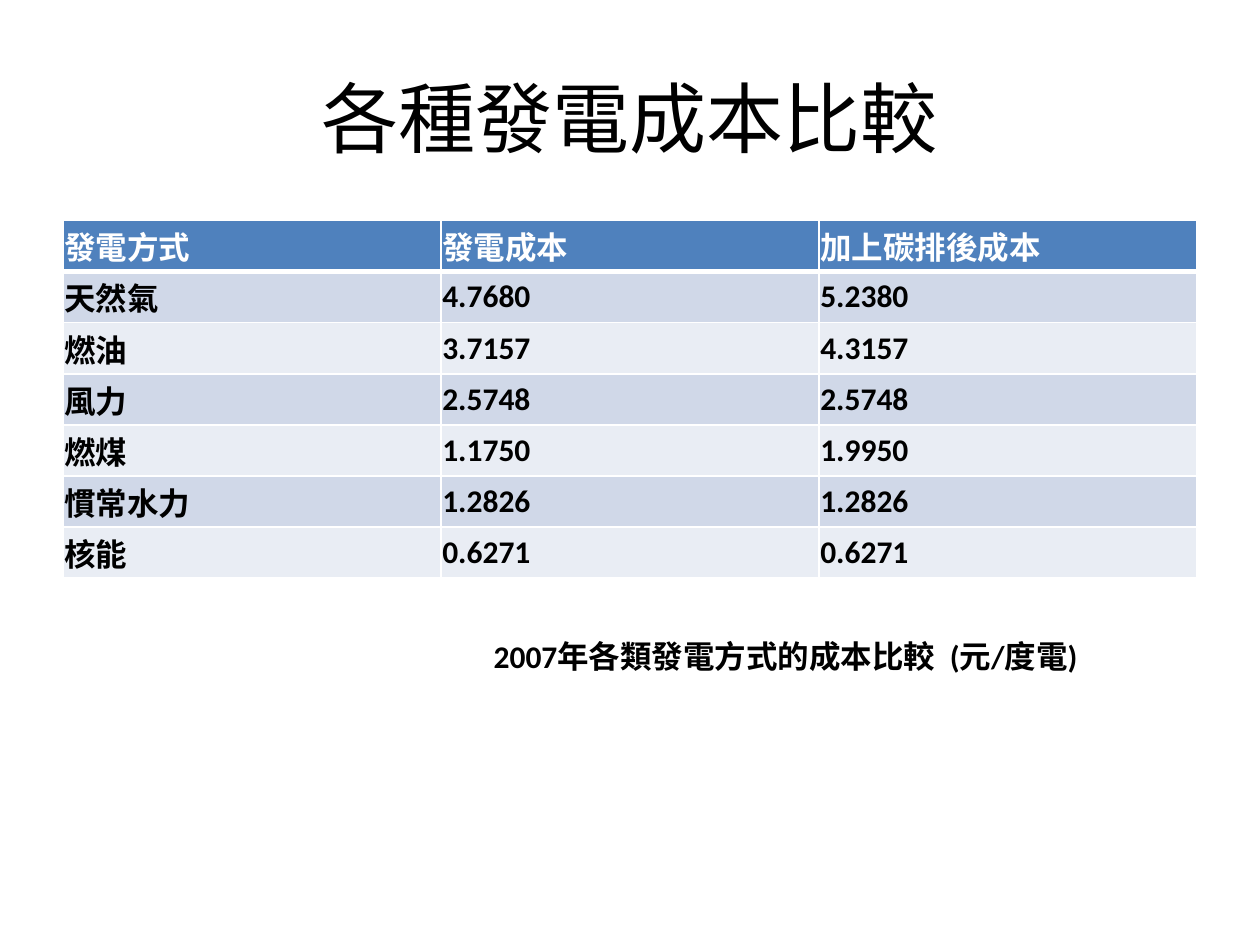
from lxml import etree
from pptx import Presentation
from pptx.dml.color import RGBColor
from pptx.enum.text import MSO_ANCHOR, PP_ALIGN
from pptx.oxml.ns import qn
from pptx.util import Pt

MIDDLE, TOP = MSO_ANCHOR.MIDDLE, MSO_ANCHOR.TOP
LEFT, CENTER = PP_ALIGN.LEFT, PP_ALIGN.CENTER

FONT = "Calibri"
COLORS = {
    "black": "000000",
    "white": "FFFFFF",
    "head": "4F81BD",
    "odd": "D0D8E8",
    "even": "E9EDF4",
}
COSTS = [
    ("發電方式", "發電成本", "加上碳排後成本"),
    ("天然氣", "4.7680", "5.2380"),
    ("燃油", "3.7157", "4.3157"),
    ("風力", "2.5748", "2.5748"),
    ("燃煤", "1.1750", "1.9950"),
    ("慣常水力", "1.2826", "1.2826"),
    ("核能", "0.6271", "0.6271"),
]


def rgb(name):
    return RGBColor.from_string(COLORS[name])


def put_text(frame, text, size=18, bold=True, color="black", align=LEFT):
    para = frame.paragraphs[0]
    para.alignment = align
    run = para.add_run()
    run.text = text
    font = run.font
    font.name, font.size, font.bold = FONT, Pt(size), bold
    font.color.rgb = rgb(color)


def add_label(slide, text, box, anchor=TOP, **style):
    frame = slide.shapes.add_textbox(*map(Pt, box)).text_frame
    frame.word_wrap = True
    frame.vertical_anchor = anchor
    put_text(frame, text, **style)


def add_edge(cell, side, width):
    props = cell._tc.get_or_add_tcPr()
    line = etree.SubElement(props, qn(f"a:ln{side}"), w=str(Pt(width)))
    fill = etree.SubElement(line, qn("a:solidFill"))
    etree.SubElement(fill, qn("a:srgbClr"), val=COLORS["white"])


def style_cell(cell, text, row):
    cell.vertical_anchor = MIDDLE
    cell.margin_left = cell.margin_right = Pt(0.75)
    cell.margin_top = cell.margin_bottom = Pt(0.75)
    put_text(cell.text_frame, text, color="black" if row else "white")
    widths = {"L": 1, "R": 1, "T": 3 if row == 1 else 1, "B": 1 if row else 3}
    for side, width in widths.items():
        add_edge(cell, side, width)
    band = "odd" if row % 2 else "even"
    cell.fill.solid()
    cell.fill.fore_color.rgb = rgb(band if row else "head")


def add_grid(slide, data, box):
    frame = slide.shapes.add_table(len(data), len(data[0]), *map(Pt, box))
    table = frame.table
    for row, values in enumerate(data):
        table.rows[row].height = Pt(box[3] / len(data))
        for col, text in enumerate(values):
            style_cell(table.cell(row, col), text, row)


def main():
    deck = Presentation()
    deck.slide_width, deck.slide_height = Pt(720), Pt(540)
    slide = deck.slides.add_slide(deck.slide_layouts[6])
    add_label(slide, "各種發電成本比較", (36, 21.6, 648, 90),
              anchor=MIDDLE, size=44, bold=False, align=CENTER)
    add_grid(slide, COSTS, (36, 126, 648, 204.4))
    add_label(slide, "2007年各類發電方式的成本比較  (元/度電)",
              (275, 360.7, 402.5, 29))
    deck.save("out.pptx")


if __name__ == "__main__":
    main()
